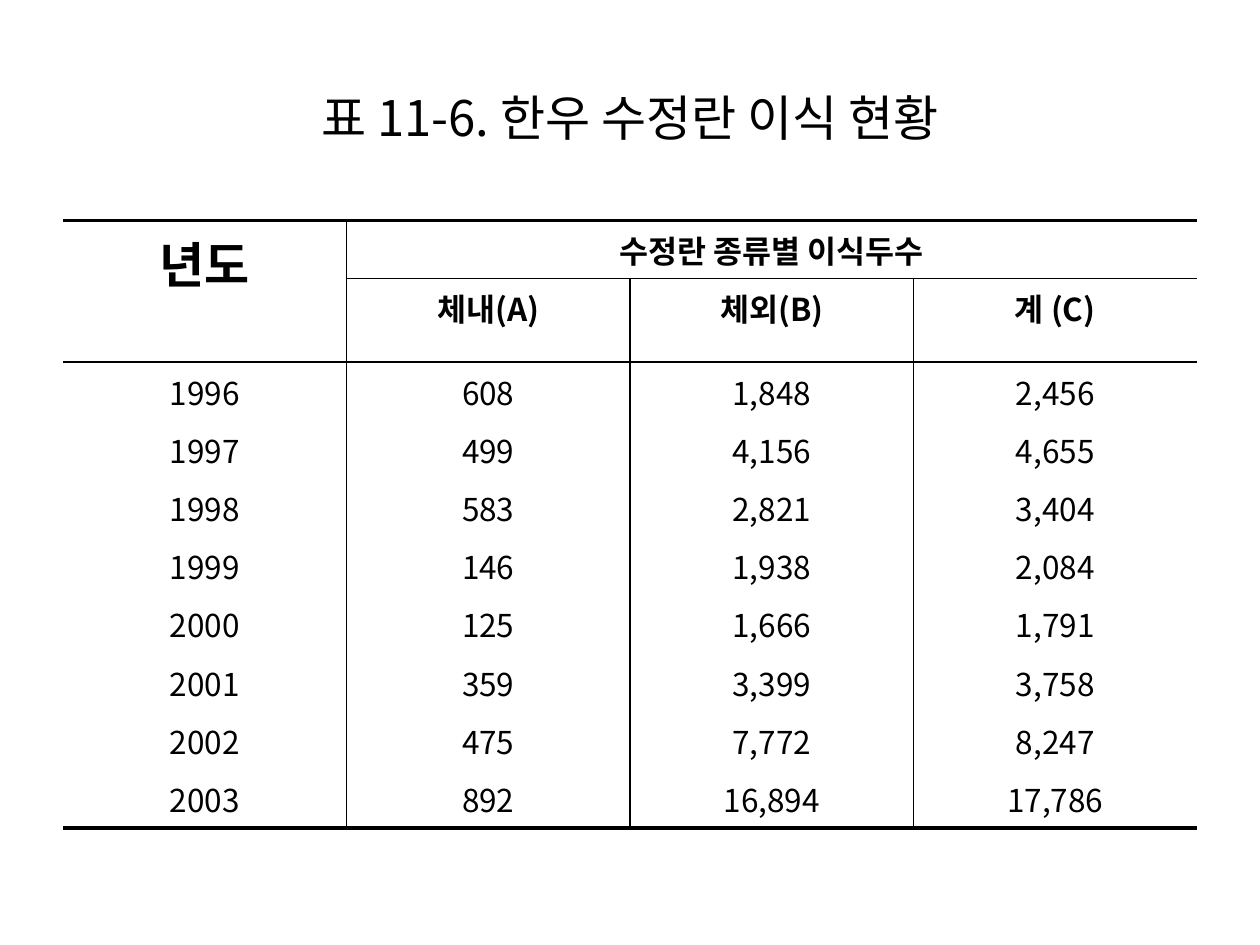
from lxml.etree import SubElement
from pptx import Presentation
from pptx.dml.color import RGBColor
from pptx.enum.text import MSO_ANCHOR, PP_ALIGN
from pptx.oxml.ns import qn
from pptx.util import Inches, Pt

BLACK = RGBColor(0x00, 0x00, 0x00)
FONT = "Noto Sans CJK KR"
THIN, THICK = 1, 2.25

YEARS = [
    ("1996", "608", "1,848", "2,456"),
    ("1997", "499", "4,156", "4,655"),
    ("1998", "583", "2,821", "3,404"),
    ("1999", "146", "1,938", "2,084"),
    ("2000", "125", "1,666", "1,791"),
    ("2001", "359", "3,399", "3,758"),
    ("2002", "475", "7,772", "8,247"),
    ("2003", "892", "16,894", "17,786"),
]
ROWS = [
    ("년도", "수정란 종류별 이식두수", "", ""),
    ("", "체내(A)", "체외(B)", "계 (C)"),
    *YEARS,
]


class SlideBuilder:
    def __init__(self, prs):
        self.s = prs.slides.add_slide(prs.slide_layouts[5])

    def set_text(self, tf, text, size, bold=False):
        p = tf.paragraphs[0]
        p.text = text
        p.alignment = PP_ALIGN.CENTER
        p.font.size = Pt(size)
        p.font.bold = bold
        p.font.color.rgb = BLACK
        p.font.name = FONT
        SubElement(p._p.pPr.find(qn("a:defRPr")), qn("a:ea"), typeface=FONT)

    def title(self, text, left, top, width, height):
        sp = self.s.shapes.title
        sp.left, sp.top = Inches(left), Inches(top)
        sp.width, sp.height = Inches(width), Inches(height)
        sp.text_frame.vertical_anchor = MSO_ANCHOR.MIDDLE
        self.set_text(sp.text_frame, text, 28)

    def border(self, cell, side, width):
        tcPr = cell._tc.get_or_add_tcPr()
        ln = SubElement(tcPr, qn(f"a:ln{side}"), w=str(Pt(width)))
        if width:
            fill = SubElement(ln, qn("a:solidFill"))
            SubElement(fill, qn("a:srgbClr"), val=str(BLACK))
        else:
            SubElement(ln, qn("a:noFill"))

    def table(self, rows, left, top, width, heights):
        n_rows, n_cols = len(rows), len(rows[0])
        frame = self.s.shapes.add_table(
            n_rows, n_cols, Inches(left), Inches(top),
            Inches(width), Inches(sum(heights)))
        table = frame.table
        table.first_row = table.horz_banding = False
        for row, height in zip(table.rows, heights):
            row.height = Inches(height)
        table.cell(0, 0).merge(table.cell(1, 0))
        table.cell(0, 1).merge(table.cell(0, 3))

        def rule_above(r, c):
            if r in (0, n_rows):
                return THICK
            return THIN if r == 2 or (r == 1 and c > 0) else 0

        def rule_before(r, c):
            if c in (0, n_cols) or (r == 0 and c > 1):
                return 0
            return THIN

        for r, values in enumerate(rows):
            for c, text in enumerate(values):
                cell = table.cell(r, c)
                last_row = r + (cell.span_height if cell.is_merge_origin else 1)
                last_col = c + (cell.span_width if cell.is_merge_origin else 1)
                self.border(cell, "L", rule_before(r, c))
                self.border(cell, "R", rule_before(r, last_col))
                self.border(cell, "T", rule_above(r, c))
                self.border(cell, "B", rule_above(last_row, c))
                cell.fill.background()
                if text:
                    size = 28 if r == c == 0 else 18
                    self.set_text(cell.text_frame, text, size, bold=r < 2)


def main():
    prs = Presentation()
    prs.slide_width, prs.slide_height = Inches(10), Inches(7.5)
    slide = SlideBuilder(prs)
    slide.title("표 11-6. 한우 수정란 이식 현황", 0.5, 0.3, 9, 1.25)
    slide.table(ROWS, 0.5, 1.75, 9, [0.46, 0.66] + [0.46] * len(YEARS))
    prs.save("out.pptx")


if __name__ == "__main__":
    main()
